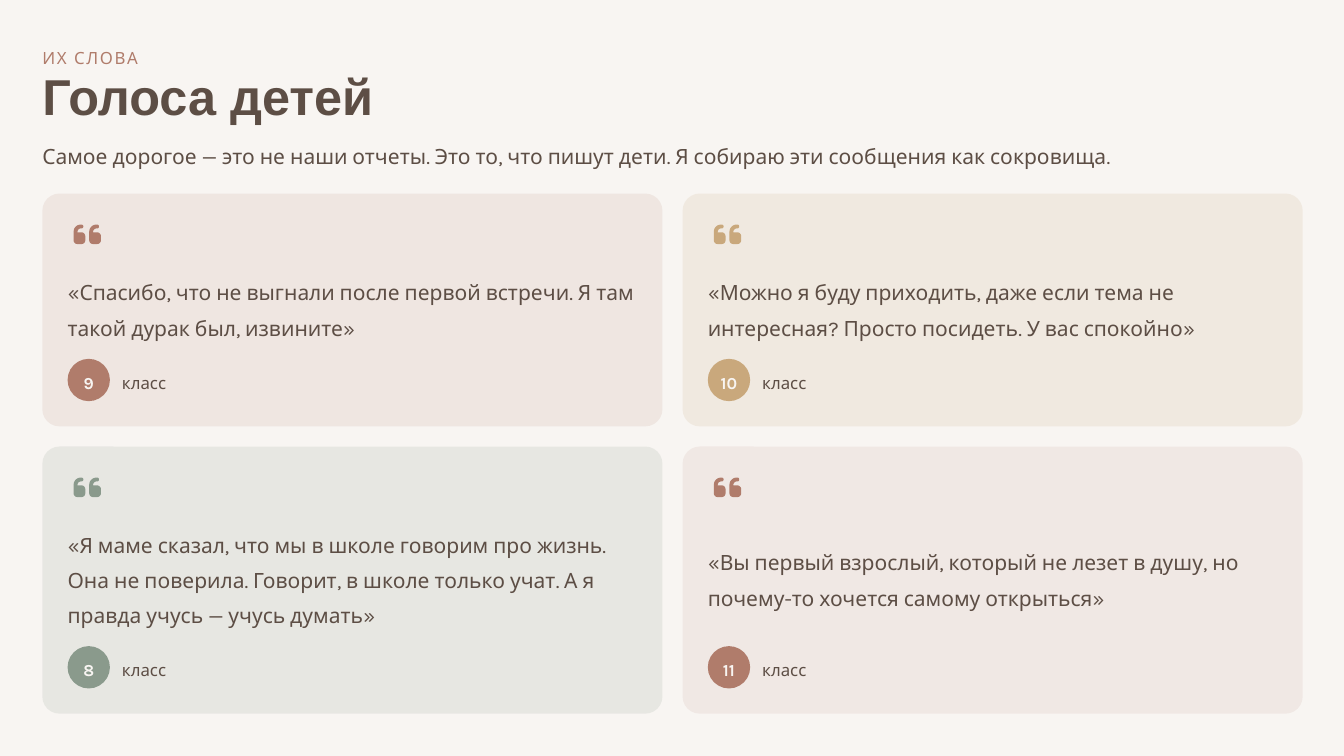
from pptx import Presentation
from pptx.dml.color import RGBColor
from pptx.enum.shapes import MSO_SHAPE
from pptx.enum.text import MSO_ANCHOR, MSO_AUTO_SIZE, PP_ALIGN
from pptx.oxml.ns import qn
from pptx.oxml.xmlchemy import OxmlElement
from pptx.util import Inches, Pt

CREAM = RGBColor(0xF8, 0xF5, 0xF2)
BROWN = RGBColor(0x5D, 0x4E, 0x45)
CLAY = RGBColor(0xB0, 0x7C, 0x6B)
SAND = RGBColor(0xC9, 0xA8, 0x7C)
SAGE = RGBColor(0x8A, 0x9A, 0x8C)

LEFT, TOP, WIDTH = 0.42, 1.92, 6.15
GAP, PAD, RADIUS, BADGE = 0.2, 0.25, 0.17, 0.42
HEIGHTS = (2.31, 2.65)

# Styles: line spacing and font values
KICKER = (1.3, dict(name="Karla", size=Pt(12), bold=False), CLAY)
TITLE = (0.8, dict(name="Arial", size=Pt(36), bold=True), BROWN)
BODY = (1.2, dict(name="Karla", size=Pt(15), bold=False), BROWN)
QUOTE = (1.4, dict(name="Karla", size=Pt(15), bold=False), BROWN)
LABEL = (1.3, dict(name="Karla", size=Pt(12), bold=False), BROWN)
NUMBER = (1.3, dict(name="Karla", size=Pt(12), bold=True), CREAM)

# Rows of cards: quote, school year, accent, tint opacity in percent
CARDS = (
    (("«Спасибо, что не выгнали после первой встречи. Я там такой дурак был, извините»",
      "9", CLAY, 12),
     ("«Можно я буду приходить, даже если тема не интересная? Просто посидеть. У вас спокойно»",
      "10", SAND, 15)),
    (("«Я маме сказал, что мы в школе говорим про жизнь. Она не поверила. "
      "Говорит, в школе только учат. А я правда учусь — учусь думать»",
      "8", SAGE, 15),
     ("«Вы первый взрослый, который не лезет в душу, но почему-то хочется самому открыться»",
      "11", CLAY, 10)),
)

# One quotation mark on a 512-unit grid: a pair is a line end, three pairs a curve
MARK = (
    ((0, 149.7), (53.7, 96), (120, 96)),
    ((128, 96),),
    ((145.7, 96), (160, 110.3), (160, 128)),
    ((160, 145.7), (145.7, 160), (128, 160)),
    ((120, 160),),
    ((89.1, 160), (64, 185.1), (64, 216)),
    ((64, 224),),
    ((128, 224),),
    ((163.3, 224), (192, 252.7), (192, 288)),
    ((192, 352),),
    ((192, 387.3), (163.3, 416), (128, 416)),
    ((64, 416),),
    ((28.7, 416), (0, 387.3), (0, 352)),
)
START, SHIFT, STEPS = (0, 216), 256, 10


def write(shape, text, style, align=PP_ALIGN.LEFT, wrap=True):
    spacing, values, color = style
    frame = shape.text_frame
    format_ = dict(margin_left=0, margin_top=0, margin_right=0, margin_bottom=0,
                   vertical_anchor=MSO_ANCHOR.MIDDLE, word_wrap=wrap,
                   auto_size=MSO_AUTO_SIZE.NONE)
    for key, value in format_.items():
        setattr(frame, key, value)
    para = frame.paragraphs[0]
    para.alignment, para.line_spacing = align, spacing
    run = para.add_run()
    run.text = text
    for key, value in values.items():
        setattr(run.font, key, value)
    run.font.color.rgb = color
    return run


def add_text(slide, box, text, style, wrap=True):
    shape = slide.shapes.add_textbox(*map(Inches, box))
    return write(shape, text, style, wrap=wrap)


def paint(shape, color):
    shape.shadow.inherit = False
    shape.fill.solid()
    shape.fill.fore_color.rgb = color
    shape.line.fill.background()


def fade(shape, percent):
    """Set the opacity of a solid fill."""
    alpha = OxmlElement("a:alpha")
    alpha.set("val", str(percent * 1000))
    next(shape._element.iter(qn("a:srgbClr"))).append(alpha)


def trace(dx):
    """Return the outline points of one quotation mark, moved right by dx."""
    points = [START]
    for step in MARK:
        if len(step) == 1:
            points += step
            continue
        knots = (points[-1], *step)
        for i in range(1, STEPS + 1):
            t = i / STEPS
            weights = ((1 - t) ** 3, 3 * t * (1 - t) ** 2, 3 * t * t * (1 - t), t ** 3)
            points.append(tuple(sum(w * k[axis] for w, k in zip(weights, knots))
                                for axis in (0, 1)))
    return [(x + dx, y) for x, y in points]


def add_marks(slide, left, top, color):
    first, second = trace(0), trace(SHIFT)
    pen = slide.shapes.build_freeform(*first[0], scale=Inches(0.31) / 512)
    pen.add_line_segments(first[1:])
    pen.move_to(*second[0])
    pen.add_line_segments(second[1:])
    paint(pen.convert_to_shape(Inches(left), Inches(top)), color)


def add_badge(slide, left, top, year, color):
    circle = slide.shapes.add_shape(
        MSO_SHAPE.OVAL, *map(Inches, (left, top, BADGE, BADGE)))
    paint(circle, color)
    write(circle, year, NUMBER, PP_ALIGN.CENTER, wrap=False)
    add_text(slide, (left + BADGE + 0.12, top + 0.08, 0.53, 0.25),
             "класс", LABEL, wrap=False)


def add_card(slide, box, quote, year, color, tint):
    left, top, width, height = box
    panel = slide.shapes.add_shape(MSO_SHAPE.ROUNDED_RECTANGLE, *map(Inches, box))
    panel.adjustments[0] = RADIUS / min(width, height)
    paint(panel, color)
    fade(panel, tint)
    inner = left + PAD
    add_marks(slide, inner + 0.06, top + PAD, color)
    add_text(slide, (inner, top + 0.73, 5.75, height - 1.56), quote, QUOTE)
    add_badge(slide, inner, top + height - PAD - BADGE, year, color)


def add_header(slide):
    kicker = add_text(slide, (LEFT, 0.42, 12.58, 0.25), "ИХ СЛОВА", KICKER)
    kicker.font._element.set("spc", "120")
    title = slide.shapes.title
    places = dict(left=LEFT, top=0.75, width=12.75, height=0.5)
    for key, value in places.items():
        setattr(title, key, Inches(value))
    write(title, "Голоса детей", TITLE)
    add_text(slide, (LEFT, 1.38, 12.6, 0.29),
             "Самое дорогое — это не наши отчеты. Это то, что пишут дети. "
             "Я собираю эти сообщения как сокровища.", BODY)


def add_grid(slide, left, top):
    for row, height in zip(CARDS, HEIGHTS):
        for col, card in enumerate(row):
            add_card(slide, (left + col * (WIDTH + GAP), top, WIDTH, height), *card)
        top += height + GAP


def main():
    deck = Presentation()
    deck.slide_width, deck.slide_height = Inches(13.33), Inches(7.5)
    slide = deck.slides.add_slide(deck.slide_layouts.get_by_name("Title Only"))
    slide.background.fill.solid()
    slide.background.fill.fore_color.rgb = CREAM
    add_header(slide)
    add_grid(slide, LEFT, TOP)
    deck.save("out.pptx")


if __name__ == "__main__":
    main()
